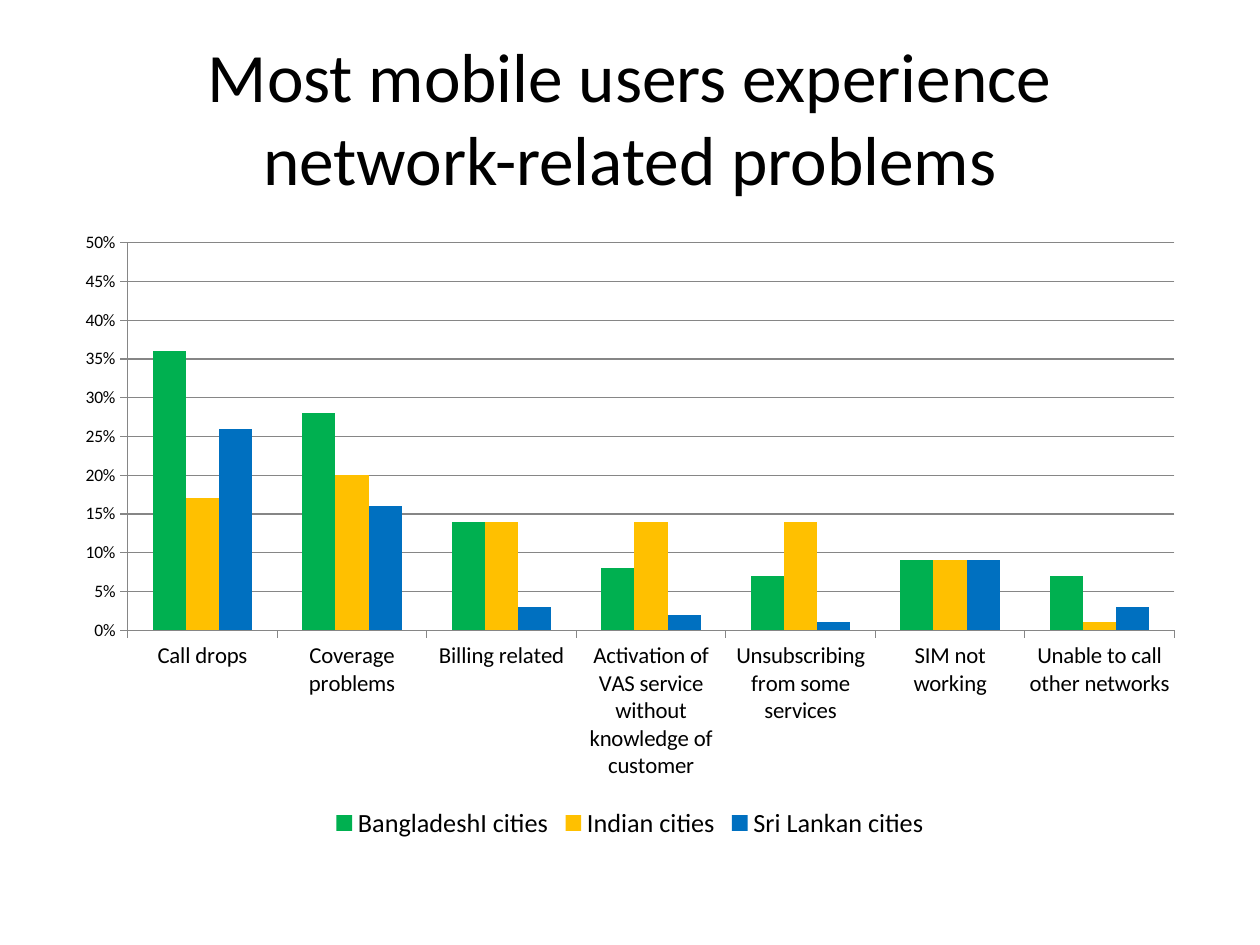
from dataclasses import dataclass

from pptx import Presentation
from pptx.chart.data import CategoryChartData
from pptx.dml.color import RGBColor
from pptx.enum.chart import XL_CHART_TYPE, XL_LEGEND_POSITION, XL_TICK_MARK
from pptx.enum.text import MSO_ANCHOR, PP_ALIGN
from pptx.util import Inches, Pt

CLUSTERED = XL_CHART_TYPE.COLUMN_CLUSTERED
BOTTOM = XL_LEGEND_POSITION.BOTTOM
OUTSIDE, NO_TICK = XL_TICK_MARK.OUTSIDE, XL_TICK_MARK.NONE
MIDDLE, CENTER = MSO_ANCHOR.MIDDLE, PP_ALIGN.CENTER

SLIDE_W, SLIDE_H = Inches(10), Inches(7.5)
MARGIN = 0.05  # share of the slide width


@dataclass(frozen=True)
class Theme:
    font: str = "Calibri"
    text: str = "000000"
    rule: str = "868686"
    title_size: float = 39.6
    value_size: float = 10
    category_size: float = 13
    legend_size: float = 15


THEME = Theme()

TITLE = "Most mobile users experience network-related problems"
PROBLEMS = [
    "Call drops",
    "Coverage problems",
    "Billing related",
    "Activation of VAS service without knowledge of customer",
    "Unsubscribing from some services",
    "SIM not working",
    "Unable to call other networks",
]
CITIES = [
    ("BangladeshI cities", "00B050", [0.36, 0.28, 0.14, 0.08, 0.07, 0.09, 0.07]),
    ("Indian cities", "FFC000", [0.17, 0.20, 0.14, 0.14, 0.14, 0.09, 0.01]),
    ("Sri Lankan cities", "0070C0", [0.26, 0.16, 0.03, 0.02, 0.01, 0.09, 0.03]),
]


def band(top, height):
    """Box between the side margins; top and height are shares of the slide height."""
    return (int(SLIDE_W * MARGIN), int(SLIDE_H * top),
            int(SLIDE_W * (1 - 2 * MARGIN)), int(SLIDE_H * height))


def apply(target, values):
    for name, value in values.items():
        setattr(target, name, value)


def style_font(font, size):
    apply(font, {"name": THEME.font, "size": Pt(size), "bold": False})
    font.color.rgb = RGBColor.from_string(THEME.text)


def style_rule(line):
    line.width = Pt(0.75)
    line.color.rgb = RGBColor.from_string(THEME.rule)


def add_title(slide, box):
    frame = slide.shapes.add_textbox(*box).text_frame
    apply(frame, {"word_wrap": True, "vertical_anchor": MIDDLE})
    heading = frame.paragraphs[0]
    apply(heading, {"text": TITLE, "alignment": CENTER})
    style_font(heading.runs[0].font, THEME.title_size)


def add_problem_chart(slide, box):
    shares = CategoryChartData(number_format="0%")
    shares.categories = PROBLEMS
    for city, _, values in CITIES:
        shares.add_series(city, values)
    chart = slide.shapes.add_chart(CLUSTERED, *box, shares).chart
    apply(chart, {"has_title": False, "has_legend": True})
    style_font(chart.font, THEME.value_size)

    apply(chart.legend, {"position": BOTTOM, "include_in_layout": False})
    style_font(chart.legend.font, THEME.legend_size)

    plot = chart.plots[0]
    apply(plot, {"gap_width": 150, "overlap": 0, "vary_by_categories": False})
    for columns, (_, color, _) in zip(plot.series, CITIES):
        columns.format.fill.solid()
        columns.format.fill.fore_color.rgb = RGBColor.from_string(color)

    apply(chart.value_axis, {"minimum_scale": 0, "maximum_scale": 0.5,
                             "major_unit": 0.05, "has_major_gridlines": True})
    apply(chart.value_axis.tick_labels,
          {"number_format": "0%", "number_format_is_linked": False})
    style_rule(chart.value_axis.major_gridlines.format.line)
    for axis, size in ((chart.value_axis, THEME.value_size),
                       (chart.category_axis, THEME.category_size)):
        apply(axis, {"major_tick_mark": OUTSIDE, "minor_tick_mark": NO_TICK})
        style_font(axis.tick_labels.font, size)
        style_rule(axis.format.line)


def main():
    deck = Presentation()
    apply(deck, {"slide_width": SLIDE_W, "slide_height": SLIDE_H})
    slide = deck.slides.add_slide(deck.slide_layouts[6])
    add_title(slide, band(0.04, 1 / 6))
    add_problem_chart(slide, band(7 / 30, 0.66))
    deck.save("out.pptx")


if __name__ == "__main__":
    main()
